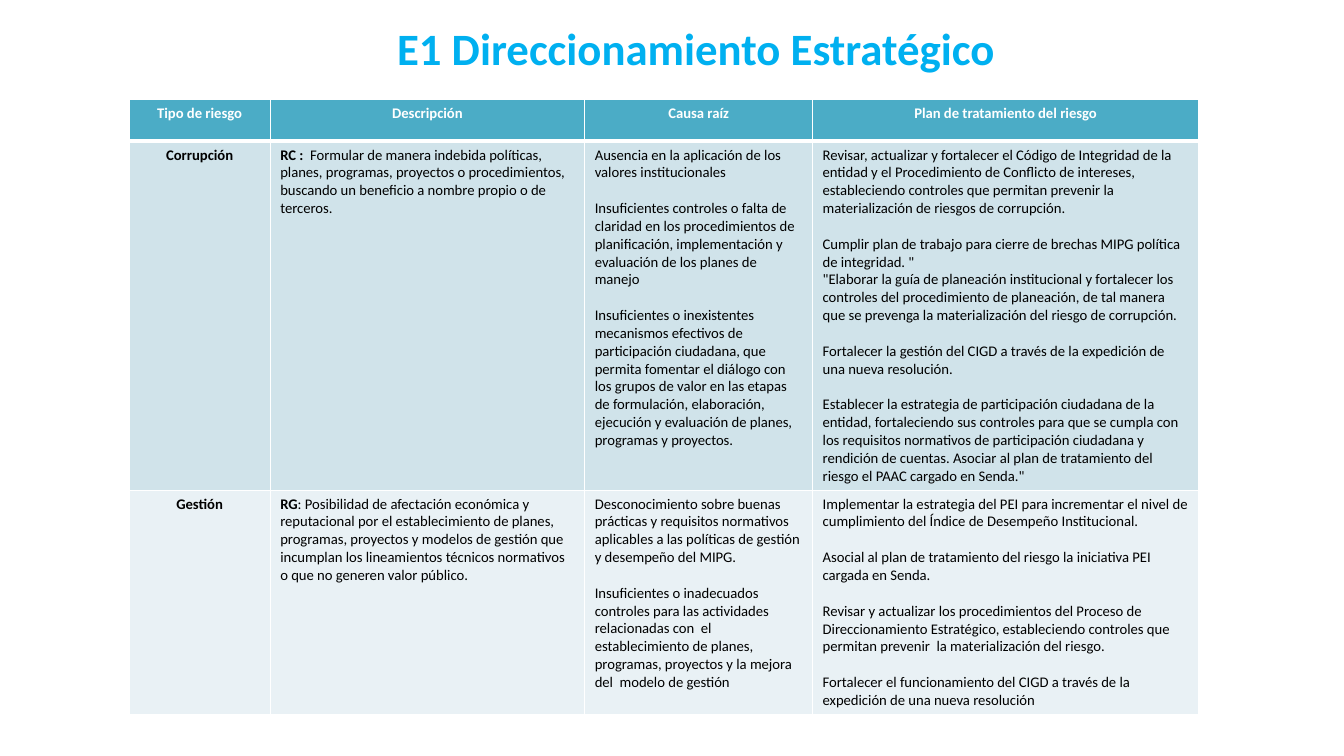
"""Build the slide with the risk table of the strategic direction process."""
from lxml import etree
from pptx import Presentation
from pptx.dml.color import RGBColor
from pptx.enum.text import MSO_ANCHOR, MSO_AUTO_SIZE, PP_ALIGN
from pptx.oxml.ns import qn
from pptx.util import Inches, Pt

TITLE = "E1 Direccionamiento Estratégico"
HEADERS = ["Tipo de riesgo", "Descripción", "Causa raíz", "Plan de tratamiento del riesgo"]
RISKS = [
    {
        "type": "Corrupción",
        "code": "RC :  ",
        "description": "Formular de manera indebida políticas, planes, programas, proyectos o "
                       "procedimientos, buscando un beneficio a nombre propio o de terceros.",
        "causes": [
            "Ausencia en la aplicación de los valores institucionales",
            "Insuficientes controles o falta de claridad en los procedimientos de planificación, "
            "implementación y evaluación de los planes de manejo",
            "Insuficientes o inexistentes mecanismos efectivos de participación ciudadana, que "
            "permita fomentar el diálogo con los grupos de valor en las etapas de formulación, "
            "elaboración, ejecución y evaluación de planes, programas y proyectos.",
        ],
        "plan": [
            "Revisar, actualizar y fortalecer el Código de Integridad de la entidad y el "
            "Procedimiento de Conflicto de intereses, estableciendo controles que permitan "
            "prevenir la materialización de riesgos de corrupción.",
            "Cumplir plan de trabajo para cierre de brechas MIPG política de integridad. \"\n"
            "\"Elaborar la guía de planeación institucional y fortalecer los controles del "
            "procedimiento de planeación, de tal manera que se prevenga la materialización del "
            "riesgo de corrupción.",
            "Fortalecer la gestión del CIGD a través de la expedición de una nueva resolución.",
            "Establecer la estrategia de participación ciudadana de la entidad, fortaleciendo sus "
            "controles para que se cumpla con los requisitos normativos de participación "
            "ciudadana y rendición de cuentas. Asociar al plan de tratamiento del riesgo el PAAC "
            "cargado en Senda.\"",
        ],
    },
    {
        "type": "Gestión",
        "code": "RG",
        "description": ": Posibilidad de afectación económica y reputacional por el "
                       "establecimiento de planes, programas, proyectos y modelos de gestión que "
                       "incumplan los lineamientos técnicos normativos o que no generen valor "
                       "público.",
        "causes": [
            "Desconocimiento sobre buenas prácticas y requisitos normativos aplicables a las "
            "políticas de gestión y desempeño del MIPG.",
            "Insuficientes o inadecuados controles para las actividades relacionadas con  el "
            "establecimiento de planes, programas, proyectos y la mejora del  modelo de gestión",
        ],
        "plan": [
            "Implementar la estrategia del PEI para incrementar el nivel de cumplimiento del "
            "Índice de Desempeño Institucional.",
            "Asocial al plan de tratamiento del riesgo la iniciativa PEI cargada en Senda.",
            "Revisar y actualizar los procedimientos del Proceso de Direccionamiento Estratégico, "
            "estableciendo controles que permitan prevenir  la materialización del riesgo.",
            "Fortalecer el funcionamiento del CIGD a través de la expedición de una nueva "
            "resolución",
        ],
    },
]

COL_WIDTHS = [1.4, 3.12, 2.26, 3.83]
ROW_HEIGHTS = [0.41, 3.45, 2.22]
FONT = "Calibri"
TEXT_SIZE = 10.5
BLOCK_GAP = 12.8

CENTER, LEFT = PP_ALIGN.CENTER, PP_ALIGN.LEFT
MIDDLE = MSO_ANCHOR.MIDDLE
NO_AUTOFIT = MSO_AUTO_SIZE.NONE
SKY = RGBColor(0x00, 0xB0, 0xF0)
TEAL = RGBColor(0x4B, 0xAC, 0xC6)
BANDS = [RGBColor(0xD0, 0xE3, 0xEA), RGBColor(0xE9, 0xF1, 0xF5)]
WHITE = RGBColor(0xFF, 0xFF, 0xFF)
BLACK = RGBColor(0x00, 0x00, 0x00)


def add_text(p, text, size=TEXT_SIZE, color=BLACK, bold=False, align=LEFT, before=0):
    """Add one formatted run to a paragraph."""
    p.alignment = align
    p.space_before = Pt(before)
    r = p.add_run()
    r.text = text
    r.font.name = FONT
    r.font.size = Pt(size)
    r.font.bold = bold
    r.font.color.rgb = color


def add_blocks(tf, blocks):
    """Write blocks of paragraphs, with a gap between blocks only."""
    for i, block in enumerate(blocks):
        for j, line in enumerate(block.split("\n")):
            p = tf.paragraphs[0] if i == j == 0 else tf.add_paragraph()
            add_text(p, line, before=BLOCK_GAP if i and not j else 0)


def style_cell(cell, fill, top=1, bottom=1):
    """Fill a cell and draw its white borders, with widths in points."""
    cell.fill.solid()
    cell.fill.fore_color.rgb = fill
    props = cell._tc.get_or_add_tcPr()
    for i, (side, width) in enumerate([("L", 1), ("R", 1), ("T", top), ("B", bottom)]):
        ln = etree.Element(qn(f"a:ln{side}"), w=str(Pt(width)))
        solid = etree.SubElement(ln, qn("a:solidFill"))
        etree.SubElement(solid, qn("a:srgbClr"), val=str(WHITE))
        props.insert(i, ln)


def add_title(slide):
    """Place and format the slide title."""
    s = slide.shapes.title
    s.left, s.top, s.width, s.height = Inches(3.07), Inches(0.2), Inches(7.67), Inches(0.54)
    tf = s.text_frame
    tf.margin_left = tf.margin_right = tf.margin_top = tf.margin_bottom = 0
    tf.word_wrap = True
    tf.auto_size = NO_AUTOFIT
    tf.vertical_anchor = MIDDLE
    add_text(tf.paragraphs[0], TITLE, size=32, color=SKY, bold=True, align=CENTER)


def add_risk_table(slide):
    """Add the table with one row for each risk."""
    table = slide.shapes.add_table(
        len(ROW_HEIGHTS), len(COL_WIDTHS), Inches(1.28), Inches(0.99),
        Inches(sum(COL_WIDTHS)), Inches(sum(ROW_HEIGHTS))).table
    for col, width in zip(table.columns, COL_WIDTHS):
        col.width = Inches(width)
    for row, height in zip(table.rows, ROW_HEIGHTS):
        row.height = Inches(height)

    for cell, header in zip(table.rows[0].cells, HEADERS):
        style_cell(cell, TEAL, bottom=3)
        add_text(cell.text_frame.paragraphs[0], header, color=WHITE, bold=True, align=CENTER)

    for i, (risk, band) in enumerate(zip(RISKS, BANDS), start=1):
        cells = list(table.rows[i].cells)
        for cell in cells:
            style_cell(cell, band, top=3 if i == 1 else 1)
        kind, description, causes, plan = [cell.text_frame for cell in cells]
        add_text(kind.paragraphs[0], risk["type"], bold=True, align=CENTER)
        add_text(description.paragraphs[0], risk["code"], bold=True)
        add_text(description.paragraphs[0], risk["description"])
        add_blocks(causes, risk["causes"])
        add_blocks(plan, risk["plan"])


def main():
    """Create and save the presentation."""
    prs = Presentation()
    prs.slide_width, prs.slide_height = Inches(13.33), Inches(7.5)
    slide = prs.slides.add_slide(prs.slide_layouts[5])
    add_title(slide)
    add_risk_table(slide)
    prs.save("out.pptx")


if __name__ == "__main__":
    main()
